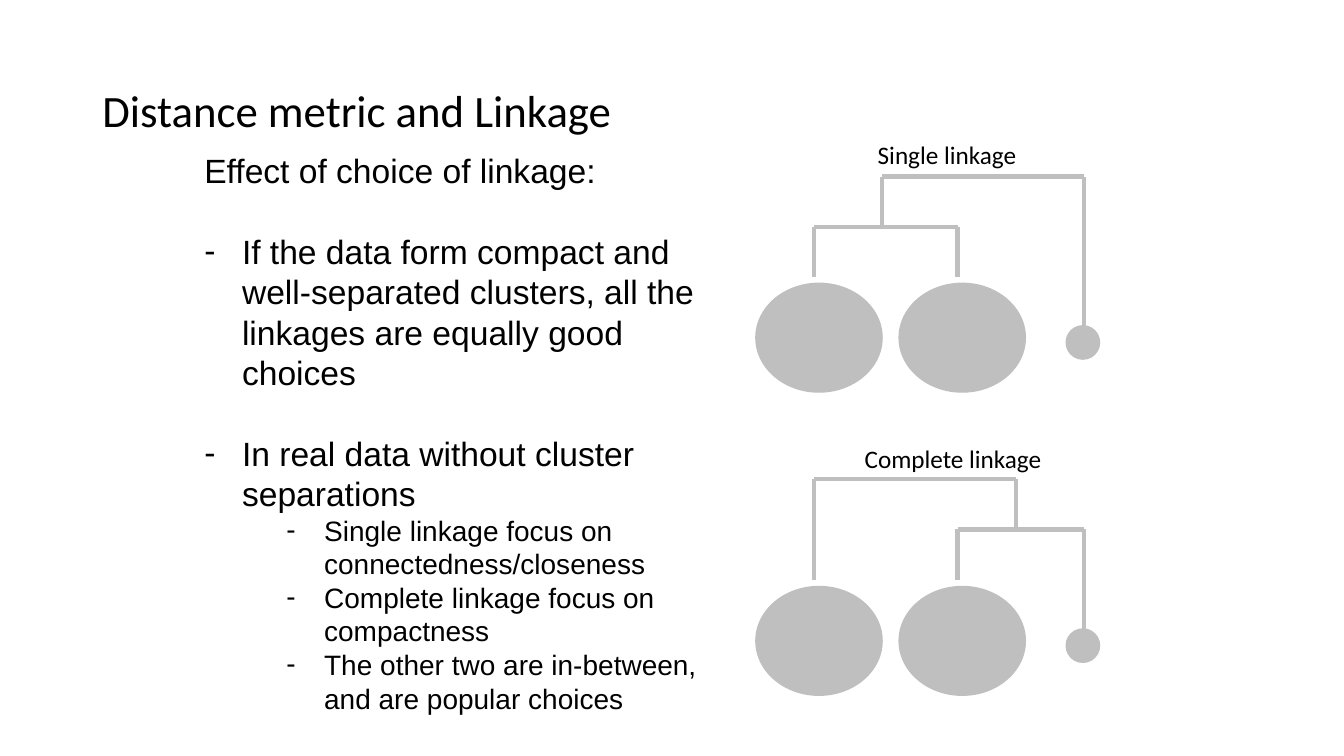
from lxml import etree
from pptx import Presentation
from pptx.dml.color import RGBColor
from pptx.enum.shapes import MSO_CONNECTOR, MSO_SHAPE
from pptx.enum.text import MSO_ANCHOR
from pptx.oxml.ns import qn
from pptx.util import Cm, Pt

STRAIGHT = MSO_CONNECTOR.STRAIGHT
OVAL = MSO_SHAPE.OVAL
TOP = MSO_ANCHOR.TOP
MIDDLE = MSO_ANCHOR.MIDDLE

BLACK = RGBColor(0x00, 0x00, 0x00)
GREY = RGBColor(0xBF, 0xBF, 0xBF)

LINE_FACTOR = 1.2
HANGING = 0.95
BRANCH_STEP = 1.27
BIG_LEFT, BIG_RIGHT, SMALL = 20.52, 24.13, 27.31

BODY = [
    ("Effect of choice of linkage:", 24, 0, None, False),
    ("If the data form compact and well-separated clusters, all the linkages "
     "are equally good choices", 24, 0, HANGING, True),
    ("In real data without cluster separations", 24, 0, HANGING, True),
    ("Single linkage focus on connectedness/closeness", 20, 1, 3.02, False),
    ("Complete linkage focus on compactness", 20, 1, 3.02, False),
    ("The other two are in-between, and are popular choices", 20, 1, 3.02, False),
]


def set_attributes(target, values):
    for name, value in values.items():
        setattr(target, name, value)


class LinkageSlide:
    def __init__(self, presentation):
        self.slide = presentation.slides.add_slide(presentation.slide_layouts[6])
        self.shapes = self.slide.shapes

    def text_box(self, left, top, width, height, wrap=True, anchor=TOP):
        box = self.shapes.add_textbox(Cm(left), Cm(top), Cm(width), Cm(height))
        set_attributes(box.text_frame, {"word_wrap": wrap, "vertical_anchor": anchor})
        return box.text_frame

    def add_text(self, paragraph, text, size, font):
        run = paragraph.add_run()
        run.text = text
        set_attributes(run.font, {"name": font, "size": Pt(size)})
        run.font.color.rgb = BLACK

    def title(self, text):
        frame = self.text_box(2.33, 1.01, 29.21, 3.68, anchor=MIDDLE)
        paragraph = frame.paragraphs[0]
        paragraph.line_spacing = 0.9
        self.add_text(paragraph, text, 32, "Calibri")

    def label(self, text, left, top, width):
        frame = self.text_box(left, top, width, 1.03, wrap=False)
        self.add_text(frame.paragraphs[0], text, 18, "Calibri")

    def body(self, items):
        frame = self.text_box(4.9, 3.66, 13.26, 14.63)
        for index, (text, size, level, margin, gap) in enumerate(items):
            paragraph = frame.add_paragraph() if index else frame.paragraphs[0]
            line_height = Pt(size * LINE_FACTOR)
            set_attributes(paragraph, {
                "level": level,
                "line_spacing": line_height,
                "space_before": line_height if gap else Pt(0),
                "space_after": Pt(0),
            })
            if margin:
                self.dash(paragraph, margin)
            self.add_text(paragraph, text, size, "Arial")

    def dash(self, paragraph, margin):
        properties = paragraph._p.get_or_add_pPr()
        properties.set("marL", str(Cm(margin)))
        properties.set("indent", str(-Cm(HANGING)))
        etree.SubElement(properties, qn("a:buFont")).set("typeface", "Arial")
        etree.SubElement(properties, qn("a:buChar")).set("char", "-")

    def cluster(self, left, top, width, height):
        shape = self.shapes.add_shape(OVAL, Cm(left), Cm(top), Cm(width), Cm(height))
        shape.shadow.inherit = False
        shape.fill.solid()
        shape.fill.fore_color.rgb = GREY
        shape.line.color.rgb = GREY
        shape.line.width = Pt(1)

    def clusters(self, top):
        for left in (19.05, 22.66):
            self.cluster(left, top, 3.18, 2.74)
        self.cluster(26.87, top + 1.07, 0.84, 0.84)

    def line(self, start, end):
        connector = self.shapes.add_connector(
            STRAIGHT, *(Cm(value) for value in start + end))
        connector.line.color.rgb = GREY
        connector.line.width = Pt(3)
        etree.SubElement(connector._element.spPr, qn("a:effectLst"))

    def bracket(self, top, left, left_steps, right, right_steps):
        self.line((left, top), (right, top))
        for x, steps in ((left, left_steps), (right, right_steps)):
            self.line((x, top), (x, top + steps * BRANCH_STEP))


def main():
    presentation = Presentation()
    set_attributes(presentation, {"slide_width": Cm(33.87), "slide_height": Cm(19.05)})
    slide = LinkageSlide(presentation)
    slide.title("Distance metric and Linkage")
    slide.body(BODY)

    single_top, complete_top = 4.45, 12.07
    slide.clusters(7.14)
    slide.bracket(single_top, 22.23, 1, SMALL, 3)
    slide.bracket(single_top + BRANCH_STEP, BIG_LEFT, 1, BIG_RIGHT, 1)

    slide.clusters(14.78)
    slide.bracket(complete_top, BIG_LEFT, 2, 25.6, 1)
    slide.bracket(complete_top + BRANCH_STEP, BIG_RIGHT, 1, SMALL, 2)

    slide.label("Single linkage", 21.87, 3.38, 4.04)
    slide.label("Complete linkage", 21.54, 11.05, 5.03)
    presentation.save("out.pptx")


if __name__ == "__main__":
    main()
